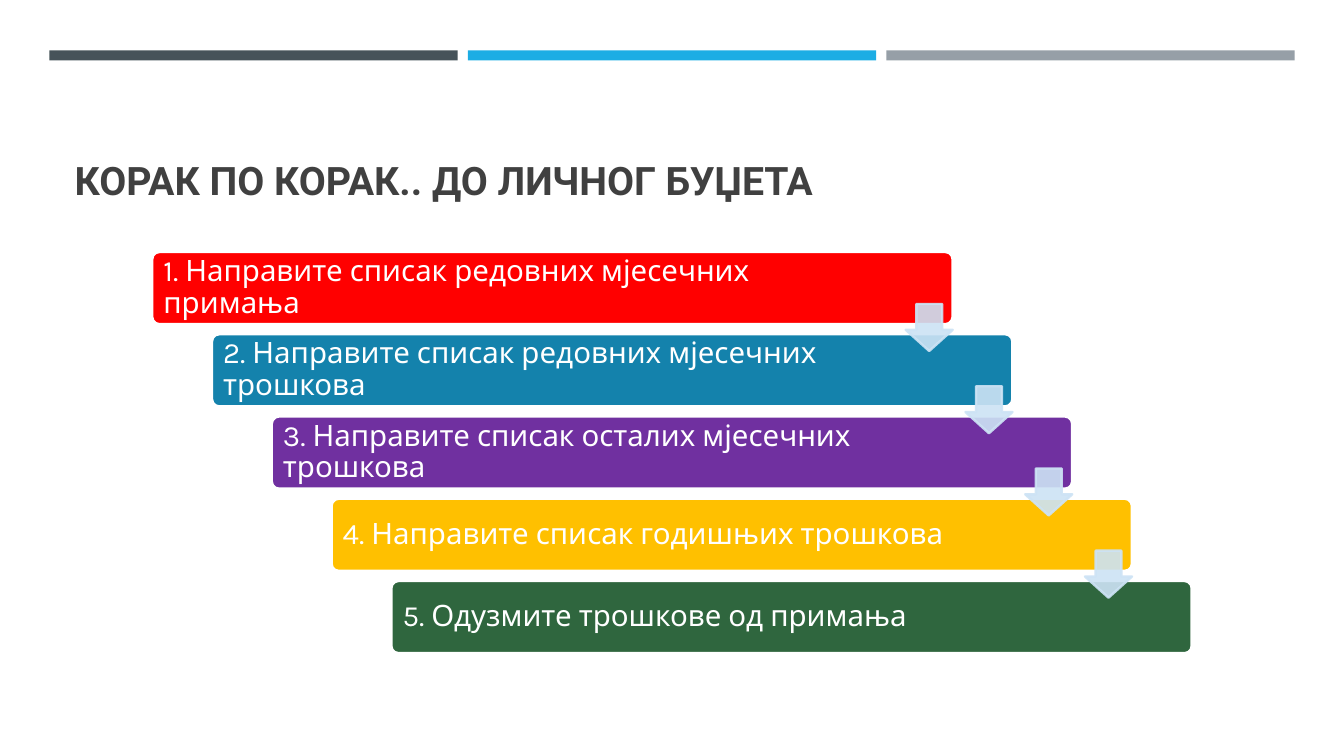
from collections import namedtuple

from lxml.etree import SubElement
from pptx import Presentation
from pptx.dml.color import RGBColor
from pptx.enum.shapes import MSO_SHAPE as Shape
from pptx.enum.text import MSO_ANCHOR as Anchor, MSO_AUTO_SIZE as AutoSize, PP_ALIGN as Align
from pptx.oxml.ns import qn
from pptx.util import Inches, Pt

Box = namedtuple("Box", "left top width height")

WIDTH, HEIGHT = 13.33, 7.5
COLORS = {
    "slate": "465359", "sky": "1CADE4", "gray": "969FA7",
    "title": "404040", "white": "FFFFFF", "arrow": "CDE3F5",
    "red": "FF0000", "blue": "1482AC", "purple": "7030A0",
    "amber": "FFC000", "green": "2F663E",
}
STEPS = [
    ("1. Направите списак редовних мјесечних примања", "red"),
    ("2. Направите списак редовних мјесечних трошкова", "blue"),
    ("3. Направите списак осталих мјесечних трошкова", "purple"),
    ("4. Направите списак годишњих трошкова", "amber"),
    ("5. Одузмите трошкове од примања", "green"),
]


def rgb(name):
    return RGBColor.from_string(COLORS[name])


def add_block(page, kind, box, fill, line=None, adjust=()):
    block = page.shapes.add_shape(kind, *map(Inches, box))
    block.shadow.inherit = False
    block.fill.solid()
    block.fill.fore_color.rgb = rgb(fill)
    if line:
        block.line.color.rgb = rgb(line)
        block.line.width = Pt(1.75)
    else:
        block.line.fill.background()
    for index, value in enumerate(adjust):
        block.adjustments[index] = value
    return block


def write(frame, text, *, font, size, color, bold=False, anchor=Anchor.MIDDLE, spacing=1.0):
    frame.word_wrap = True
    frame.auto_size = AutoSize.NONE
    frame.vertical_anchor = anchor
    para = frame.paragraphs[0]
    para.alignment = Align.LEFT
    para.line_spacing = spacing
    span = para.add_run()
    span.text = text
    span.font.name = font
    span.font.size = Pt(size)
    span.font.bold = bold
    span.font.color.rgb = rgb(color)


def set_opacity(block, percent):
    """Apply the opacity to both the fill and the outline."""
    for color in block._element.spPr.iter(qn("a:srgbClr")):
        SubElement(color, qn("a:alpha"), val=str(percent * 1000))


def add_top_stripes(page, box, gap=0.1):
    names = ("slate", "sky", "gray")
    width = (box.width - gap * (len(names) - 1)) / len(names)
    for column, name in enumerate(names):
        left = box.left + column * (width + gap)
        add_block(page, Shape.RECTANGLE, Box(left, box.top, width, box.height), name)


def add_title(page, box, text):
    title = page.shapes.title
    title.left, title.top, title.width, title.height = map(Inches, box)
    write(title.text_frame, text, font="Roboto", size=28, color="title",
          bold=True, anchor=Anchor.BOTTOM)


def add_staircase(page, box, steps):
    """Bars that step down to the right, each handing on to the next by an arrow."""
    bar_width, bar_height = box.width * 0.77, box.height * 0.18
    step_x = (box.width - bar_width) / (len(steps) - 1)
    step_y = (box.height - bar_height) / (len(steps) - 1)
    arrow_size = bar_height * 0.65

    for row, (text, color) in enumerate(steps):
        bar = add_block(page, Shape.ROUNDED_RECTANGLE,
                        Box(box.left + row * step_x, box.top + row * step_y,
                            bar_width, bar_height),
                        color, line="white", adjust=[0.1])
        frame = bar.text_frame
        frame.margin_left, frame.margin_right = Inches(0.09), Inches(1.15)
        frame.margin_top = frame.margin_bottom = 0
        write(frame, text, font="Karla", size=21, color="white", spacing=0.9)

    for row in range(len(steps) - 1):
        right = box.left + row * step_x + bar_width
        top = box.top + row * step_y + bar_height * 0.72
        arrow = add_block(page, Shape.DOWN_ARROW,
                          Box(right - arrow_size, top, arrow_size, arrow_size),
                          "arrow", line="arrow", adjust=[0.55, 0.45])
        set_opacity(arrow, 90)


def main():
    deck = Presentation()
    deck.slide_width, deck.slide_height = Inches(WIDTH), Inches(HEIGHT)
    page = deck.slides.add_slide(deck.slide_layouts[5])
    add_top_stripes(page, Box(0.49, 0.5, 12.35, 0.1))
    add_title(page, Box(0.64, 0.77, 12.06, 1.3), "КОРАК ПО КОРАК.. ДО ЛИЧНОГ БУЏЕТА")
    add_staircase(page, Box(1.51, 2.5, 10.31, 3.98), STEPS)
    deck.save("out.pptx")


if __name__ == "__main__":
    main()
